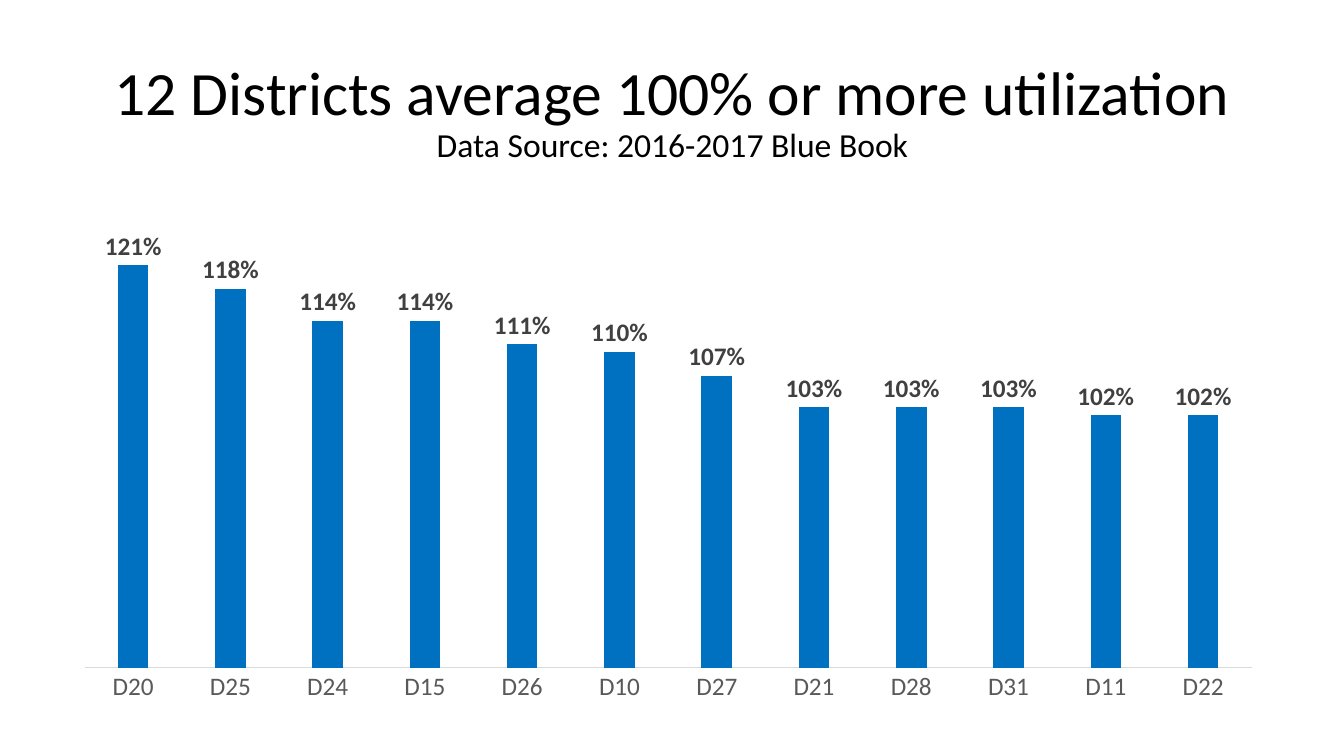
from lxml import etree
from pptx import Presentation
from pptx.chart.data import CategoryChartData
from pptx.dml.color import RGBColor
from pptx.enum.chart import XL_CHART_TYPE, XL_LABEL_POSITION, XL_TICK_MARK
from pptx.enum.text import MSO_ANCHOR, MSO_AUTO_SIZE, PP_ALIGN
from pptx.oxml.ns import qn
from pptx.util import Inches, Pt

COLUMNS = XL_CHART_TYPE.COLUMN_CLUSTERED
OUTSIDE_END = XL_LABEL_POSITION.OUTSIDE_END
NO_TICKS = XL_TICK_MARK.NONE
MIDDLE = MSO_ANCHOR.MIDDLE
NO_AUTOFIT = MSO_AUTO_SIZE.NONE
CENTER = PP_ALIGN.CENTER
TITLE_ONLY = 5

FONT = "Calibri"
COLORS = {
    "text": "000000",
    "bar": "0070C0",
    "value label": "404040",
    "district label": "595959",
    "axis line": "D9D9D9",
}
UTILIZATION = {
    "D20": 1.21, "D25": 1.18, "D24": 1.14, "D15": 1.14,
    "D26": 1.11, "D10": 1.10, "D27": 1.07, "D21": 1.03,
    "D28": 1.03, "D31": 1.03, "D11": 1.02, "D22": 1.02,
}


def rgb(name):
    return RGBColor.from_string(COLORS[name])


def format_font(font, size, color="text", bold=False):
    font.name = FONT
    font.size = Pt(size)
    font.bold = bold
    font.color.rgb = rgb(color)


def add_text(paragraph, text, **font_format):
    run = paragraph.add_run()
    run.text = text
    format_font(run.font, **font_format)


def set_inner_plot_area(chart, **fractions):
    """Place the area inside the axes by x, y, w and h as shares of the chart."""
    plot_area = chart._chartSpace.chart.plotArea
    for layout in plot_area.findall(qn("c:layout")):
        plot_area.remove(layout)
    layout = etree.Element(qn("c:layout"))
    manual = etree.SubElement(layout, qn("c:manualLayout"))
    settings = {"layoutTarget": "inner", "xMode": "edge", "yMode": "edge", **fractions}
    for tag, value in settings.items():
        etree.SubElement(manual, qn(f"c:{tag}")).set("val", str(value))
    plot_area.insert(0, layout)


class SlideBuilder:
    def __init__(self, presentation):
        layout = presentation.slide_layouts[TITLE_ONLY]
        self.slide = presentation.slides.add_slide(layout)

    def title(self, heading, source, left, top, width, height):
        shape = self.slide.shapes.title
        shape.left, shape.top = Inches(left), Inches(top)
        shape.width, shape.height = Inches(width), Inches(height)
        frame = shape.text_frame
        frame.word_wrap = True
        frame.auto_size = NO_AUTOFIT
        frame.vertical_anchor = MIDDLE
        paragraph = frame.paragraphs[0]
        paragraph.alignment = CENTER
        paragraph.line_spacing = 0.9
        add_text(paragraph, heading, size=44)
        paragraph.add_line_break()
        add_text(paragraph, source, size=24)

    def column_chart(self, values, left, top, width, height):
        data = CategoryChartData(number_format="0%")
        data.categories = list(values)
        data.add_series("Series 1", list(values.values()))
        chart = self.slide.shapes.add_chart(
            COLUMNS, Inches(left), Inches(top), Inches(width), Inches(height), data
        ).chart
        chart.has_title = False
        chart.has_legend = False
        format_font(chart.font, size=10)
        set_inner_plot_area(chart, x=0.026, y=0, w=0.974, h=0.908)
        self.format_columns(chart.plots[0])
        self.format_axes(chart)

    def format_columns(self, plot):
        plot.gap_width = 219
        plot.overlap = -27
        plot.vary_by_categories = False
        fill = plot.series[0].format.fill
        fill.solid()
        fill.fore_color.rgb = rgb("bar")
        plot.has_data_labels = True
        labels = plot.data_labels
        labels.show_value = True
        labels.position = OUTSIDE_END
        labels.number_format = "0%"
        labels.number_format_is_linked = False
        format_font(labels.font, size=18, color="value label", bold=True)

    def format_axes(self, chart):
        districts = chart.category_axis
        districts.major_tick_mark = NO_TICKS
        districts.minor_tick_mark = NO_TICKS
        districts.format.line.color.rgb = rgb("axis line")
        districts.format.line.width = Pt(0.75)
        format_font(districts.tick_labels.font, size=18, color="district label")
        percentages = chart.value_axis
        percentages.minimum_scale = 0.7
        percentages.maximum_scale = 1.3
        percentages.has_major_gridlines = False
        percentages.visible = False


def main():
    presentation = Presentation()
    presentation.slide_width = Inches(13.33)
    presentation.slide_height = Inches(7.5)
    builder = SlideBuilder(presentation)
    builder.title(
        "12 Districts average 100% or more utilization",
        "Data Source: 2016-2017 Blue Book",
        left=0.92, top=0.4, width=11.5, height=1.45,
    )
    builder.column_chart(UTILIZATION, left=0.53, top=1.93, width=11.89, height=5.17)
    presentation.save("out.pptx")


if __name__ == "__main__":
    main()
